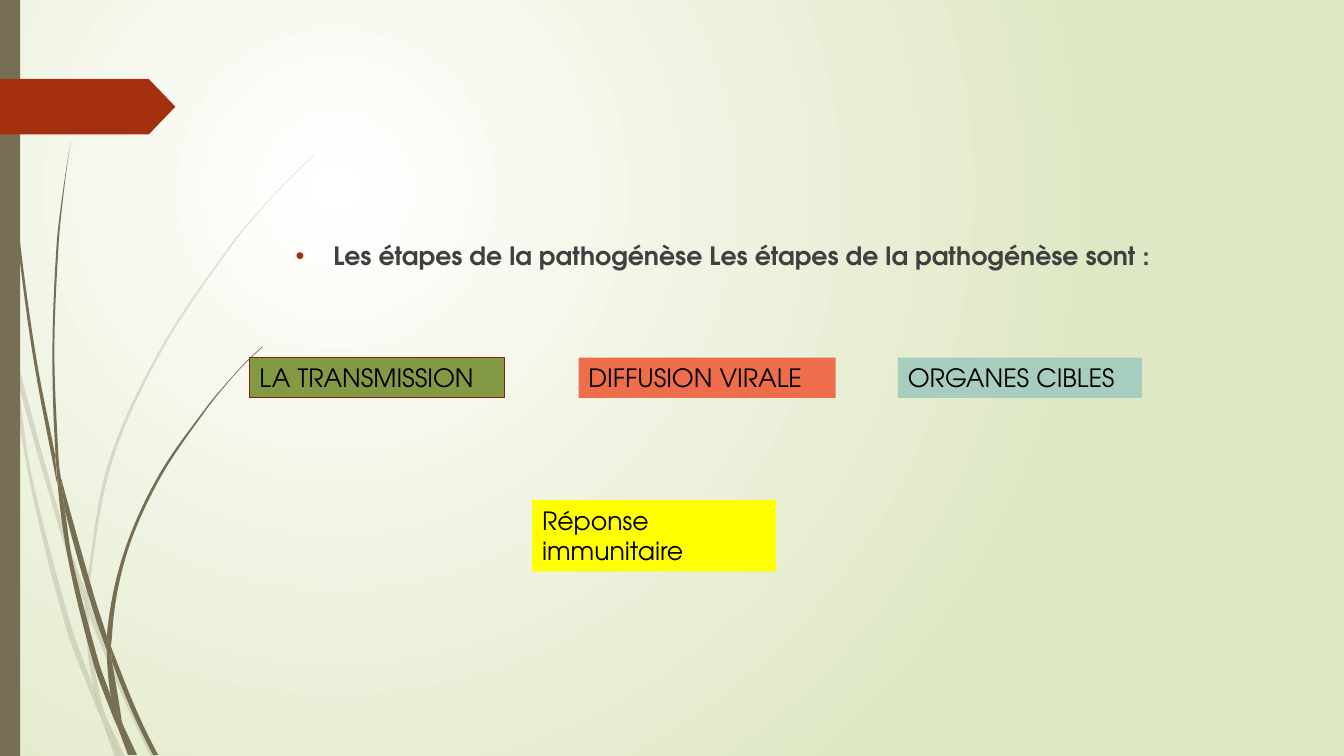
"""Build a slide naming the stages of viral pathogenesis."""
from lxml import etree
from pptx import Presentation
from pptx.dml.color import RGBColor
from pptx.enum.shapes import MSO_SHAPE
from pptx.enum.text import MSO_ANCHOR, MSO_AUTO_SIZE, PP_ALIGN
from pptx.oxml.ns import qn
from pptx.util import Cm, Pt

RECTANGLE = MSO_SHAPE.RECTANGLE
PENTAGON = MSO_SHAPE.PENTAGON
TOP = MSO_ANCHOR.TOP
LEFT = PP_ALIGN.LEFT
FIT_SHAPE = MSO_AUTO_SIZE.SHAPE_TO_FIT_TEXT

WHITE = RGBColor(0xFF, 0xFF, 0xFF)
BLACK = RGBColor(0x00, 0x00, 0x00)
CHARCOAL = RGBColor(0x40, 0x40, 0x40)
PALE_GREEN = RGBColor(0xDF, 0xE8, 0xC4)
TAUPE = RGBColor(0x76, 0x6F, 0x54)
RUST = RGBColor(0xA5, 0x30, 0x10)
DARK_RUST = RGBColor(0x7C, 0x24, 0x0C)
OLIVE = RGBColor(0x83, 0x99, 0x43)
CORAL = RGBColor(0xEE, 0x6E, 0x4B)
AQUA = RGBColor(0xA6, 0xCD, 0xBD)
YELLOW = RGBColor(0xFF, 0xFF, 0x00)

GRID = 0.0254

PALE_BLADES = [
    [[(11, 350), (9, 322), (0, 282)], [(0, 299), (10, 344), (11, 350)]],
    [[(17, 376), (58, 522), (84, 599)], [(85, 586), (62, 520), (14, 345)]],
    [[(88, 610), (123, 694), (150, 751)], [(155, 751), (127, 692), (92, 607), (88, 596)]],
    [[(105, 711), (119, 751)], [(124, 751), (105, 711)]],
    [[(11, 350), (28, 470), (65, 621), (92, 693), (101, 714)],
     [(99, 707), (93, 683), (70, 619), (31, 469), (17, 376), (11, 350)]],
    [[(84, 599), (87, 646), (93, 683), (96, 692), (105, 711)],
     [(103, 706), (91, 646), (88, 610), (88, 608), (84, 599)]],
    [[(88, 596), (88, 584), (110, 462), (160, 349), (229, 245), (268, 198), (290, 175),
      (312, 154)],
     [(312, 153), (289, 175), (268, 197), (228, 244), (158, 348), (107, 461), (85, 584),
      (85, 586)]],
    [[(101, 714), (114, 751)], [(119, 751), (101, 714)]],
    [[(88, 608), (88, 610)], [(88, 596), (85, 586)], [(84, 599), (88, 608)]],
    [[(93, 683), (99, 707), (101, 714), (119, 751)],
     [(119, 751), (105, 711), (96, 692), (93, 683)]],
]
DARK_BLADES = [
    [[(3, 0), (4, 48), (7, 110), (17, 233), (33, 355), (56, 477), (57, 481)],
     [(55, 457), (55, 453), (36, 355), (19, 232), (8, 109), (5, 48), (4, 0)]],
    [[(64, 505), (88, 592), (106, 645)], [(106, 633), (106, 631), (93, 590), (60, 472)]],
    [[(111, 656), (132, 708), (152, 749)], [(157, 749), (136, 706), (113, 649), (110, 641)]],
    [[(57, 477), (68, 557), (93, 659), (111, 708), (117, 722)],
     [(116, 717), (110, 691), (98, 657), (72, 556), (64, 505), (57, 477)]],
    [[(70, 141), (62, 193), (56, 245), (52, 349), (55, 449), (60, 472)],
     [(60, 472), (58, 453), (54, 349), (58, 245), (63, 193), (70, 141)]],
    [[(122, 719), (133, 749)], [(136, 749), (122, 719)]],
    [[(57, 477), (64, 505)], [(60, 472), (55, 449)], [(55, 453), (57, 477)]],
    [[(111, 633), (125, 552), (158, 476), (205, 406), (231, 374), (245, 359), (261, 344)],
     [(260, 344), (245, 358), (231, 373), (204, 405), (156, 474), (122, 551), (106, 631)],
     [(110, 641), (111, 633)]],
    [[(117, 722), (127, 749)], [(131, 749), (117, 722)]],
    [[(106, 645), (110, 691), (116, 706), (122, 719)],
     [(121, 716), (111, 656), (109, 651), (106, 645)]],
    [[(106, 645), (109, 651), (111, 656)], [(110, 641), (106, 631)], [(106, 633), (106, 645)]],
    [[(110, 691), (116, 717), (117, 722), (130, 749)],
     [(133, 749), (122, 719), (116, 706), (110, 691)]],
]
STAGES = [
    ("LA TRANSMISSION", 6.29, 9.01, 6.43, 1.02, OLIVE, DARK_RUST),
    ("DIFFUSION VIRALE", 14.58, 9.01, 6.48, 1.02, CORAL, None),
    ("ORGANES CIBLES", 22.63, 9.01, 6.15, 1.02, AQUA, None),
    ("Réponse immunitaire", 13.41, 12.6, 6.15, 1.8, YELLOW, None),
]


def bend(edge):
    """Return the edge's points with two curve handles between neighbours."""
    points = [complex(*point) for point in edge]
    steps = [end - start for start, end in zip(points, points[1:])]
    slopes = [(a + b) / (abs(a) + abs(b)) for a, b in zip(steps, steps[1:])]
    first, last = (step / abs(step) for step in (steps[0], steps[-1]))
    if slopes:
        first, last = 2 * first - slopes[0], 2 * last - slopes[-1]
    slopes = [first, *slopes, last]
    curve = [points[0]]
    for index, step in enumerate(steps):
        reach = abs(step) / 3
        curve += [points[index] + slopes[index] * reach,
                  points[index + 1] - slopes[index + 1] * reach,
                  points[index + 1]]
    return curve


def write_text(frame, text, font, size=18, color=BLACK, bold=False, bullet_color=None):
    """Write one paragraph, with a bullet when a bullet colour is given."""
    frame.word_wrap = True
    frame.vertical_anchor = TOP
    paragraph = frame.paragraphs[0]
    paragraph.alignment = LEFT
    if bullet_color is not None:
        properties = paragraph._p.get_or_add_pPr()
        properties.set("marL", str(Cm(0.95)))
        properties.set("indent", str(-Cm(0.95)))
        tint = etree.SubElement(properties, qn("a:buClr"))
        etree.SubElement(tint, qn("a:srgbClr"), val=str(bullet_color))
        etree.SubElement(properties, qn("a:buFont"), typeface="Arial")
        etree.SubElement(properties, qn("a:buChar"), char="•")
    run = paragraph.add_run()
    run.text = text
    run.font.name = font
    run.font.size = Pt(size)
    run.font.bold = bold
    run.font.color.rgb = color


class SlideBuilder:
    """Hold the text style and the current slide."""

    def __init__(self, slide, font):
        """Keep the slide and the font name."""
        self.slide = slide
        self.font = font

    def background(self, inner, outer):
        """Fill the background with a radial gradient."""
        fill = self.slide.background.fill
        fill.gradient()
        for stop, color in zip(fill.gradient_stops, (inner, outer)):
            stop.color.rgb = color
        gradient = self.slide.element.find(".//" + qn("a:gradFill"))
        gradient.remove(gradient.find(qn("a:lin")))
        circle = etree.SubElement(gradient, qn("a:path"), path="circle")
        etree.SubElement(circle, qn("a:fillToRect"),
                         l="50000", t="50000", r="100000", b="100000")

    def paint(self, shape, fill, line=None):
        """Give a shape a flat fill and an optional thin outline."""
        shape.shadow.inherit = False
        shape.fill.solid()
        shape.fill.fore_color.rgb = fill
        if line is None:
            shape.line.fill.background()
        else:
            shape.line.color.rgb = line
            shape.line.width = Pt(0.75)
        return shape

    def blade(self, edges, opacity=100):
        """Draw one piece of a grass blade with curved edges."""
        outline = []
        for edge in edges:
            curve = bend(edge)
            if outline:
                outline += [outline[-1], curve[0]]
            outline += curve
        outline = [(Cm(GRID * point.real), Cm(GRID * point.imag)) for point in outline]
        builder = self.slide.shapes.build_freeform(*outline[0], scale=1.0)
        builder.add_line_segments(outline[1:], close=True)
        shape = self.paint(builder.convert_to_shape(), TAUPE)
        lines = list(shape.element.iter(qn("a:lnTo")))
        for triple in zip(lines[::3], lines[1::3], lines[2::3]):
            cubic = etree.Element(qn("a:cubicBezTo"))
            triple[0].addprevious(cubic)
            for line in triple:
                cubic.append(line[0])
                line.getparent().remove(line)
        if opacity < 100:
            color = shape.element.spPr.find(".//" + qn("a:srgbClr"))
            etree.SubElement(color, qn("a:alpha"), val=str(opacity * 1000))

    def block(self, kind, left, top, width, height, fill, line=None):
        """Add a filled preset shape, measured in centimetres."""
        shape = self.slide.shapes.add_shape(kind, Cm(left), Cm(top), Cm(width), Cm(height))
        return self.paint(shape, fill, line)

    def stage(self, text, *box):
        """Add a coloured box naming one stage."""
        frame = self.block(RECTANGLE, *box).text_frame
        write_text(frame, text, self.font)
        frame.auto_size = FIT_SHAPE

    def bullet(self, text, left, top, width, height):
        """Add a bulleted bold statement."""
        box = self.slide.shapes.add_textbox(Cm(left), Cm(top), Cm(width), Cm(height))
        write_text(box.text_frame, text, self.font,
                   color=CHARCOAL, bold=True, bullet_color=RUST)


def main():
    """Create the presentation and save it."""
    presentation = Presentation()
    presentation.slide_width, presentation.slide_height = Cm(33.87), Cm(19.05)
    slide = presentation.slides.add_slide(presentation.slide_layouts[6])
    builder = SlideBuilder(slide, "TeX Gyre Adventor")
    builder.background(WHITE, PALE_GREEN)
    for blades, opacity in ((PALE_BLADES, 20), (DARK_BLADES, 100)):
        for edges in blades:
            builder.blade(edges, opacity)
    builder.block(RECTANGLE, 0, 0, 0.51, 19.05, TAUPE)
    builder.block(PENTAGON, 0, 1.99, 4.42, 1.4, RUST).adjustments[0] = 0.48
    builder.bullet("Les étapes de la pathogénèse Les étapes de la pathogénèse sont :",
                   7.2, 5.93, 24.77, 10.49)
    for stage in STAGES:
        builder.stage(*stage)
    presentation.save("out.pptx")


if __name__ == "__main__":
    main()
